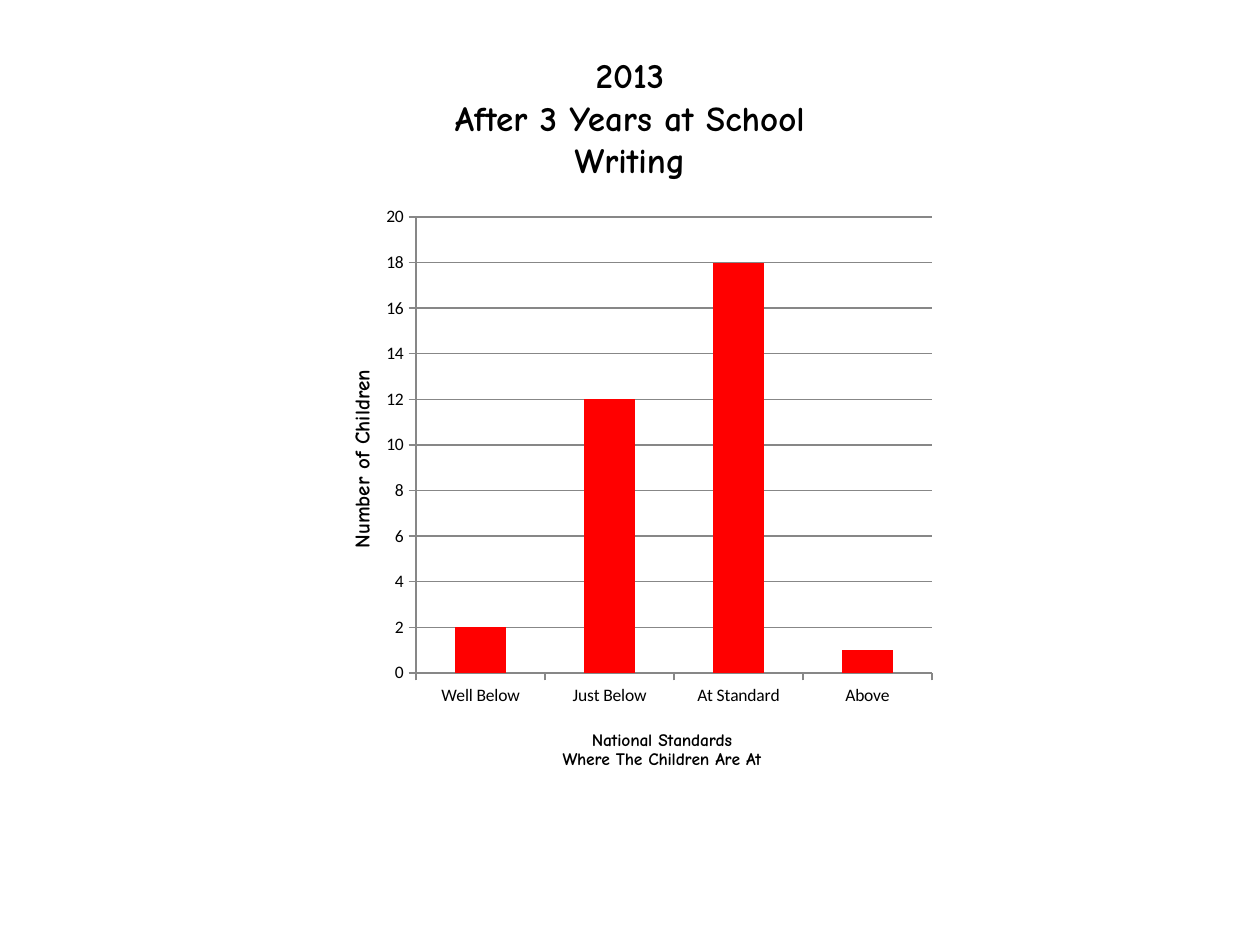
from lxml import etree
from pptx import Presentation
from pptx.chart.data import CategoryChartData
from pptx.dml.color import RGBColor
from pptx.enum.chart import XL_CHART_TYPE, XL_TICK_MARK
from pptx.enum.text import MSO_ANCHOR, PP_ALIGN
from pptx.oxml.ns import qn
from pptx.util import Pt

PX = 914400 / 126
COLUMNS = XL_CHART_TYPE.COLUMN_CLUSTERED
TICK_OUTSIDE = XL_TICK_MARK.OUTSIDE
MIDDLE = MSO_ANCHOR.MIDDLE
CENTER = PP_ALIGN.CENTER
COLORS = {"text": "000000", "bar": "FF0000", "line": "878787"}
HEADING_FONT = "Comic Neue"
LABEL_FONT = "Calibri"


def px(value):
    return round(value * PX)


def color(name):
    return RGBColor.from_string(COLORS[name])


class ChartSlide:
    """Holds the style and the current slide, and adds its elements."""

    def __init__(self, presentation):
        self.slide = presentation.slides.add_slide(presentation.slide_layouts[6])

    def style_font(self, font, name, size, bold):
        font.name = name
        font.size = Pt(size)
        font.bold = bold
        font.color.rgb = color("text")

    def set_heading(self, text_frame, text, size):
        text_frame.text = text
        for paragraph in text_frame.paragraphs:
            paragraph.alignment = CENTER
            for run in paragraph.runs:
                self.style_font(run.font, HEADING_FONT, size, True)

    def title(self, box, text, size):
        shape = self.slide.shapes.add_textbox(*map(px, box))
        shape.text_frame.word_wrap = True
        shape.text_frame.vertical_anchor = MIDDLE
        self.set_heading(shape.text_frame, text, size)

    def place(self, parent, chart_box, **position):
        layout = parent.find(qn("c:layout"))
        if layout is None:
            layout = etree.Element(qn("c:layout"))
            parent.insert(0, layout)
        manual = etree.SubElement(layout, qn("c:manualLayout"))
        left, top, width, height = chart_box
        values = {}
        if "w" in position:
            values["layoutTarget"] = "inner"
        values.update(xMode="edge", yMode="edge")
        values["x"] = (position["x"] - left) / width
        values["y"] = (position["y"] - top) / height
        if "w" in position:
            values["w"] = position["w"] / width
            values["h"] = position["h"] / height
        for tag, value in values.items():
            etree.SubElement(manual, qn(f"c:{tag}")).set("val", str(value))

    def axis(self, axis, text, size, chart_box, x, y):
        axis.major_tick_mark = TICK_OUTSIDE
        axis.format.line.color.rgb = color("line")
        axis.format.line.width = Pt(0.75)
        axis.has_title = True
        self.set_heading(axis.axis_title.text_frame, text, size)
        title_element = axis.axis_title.text_frame._txBody.getparent().getparent()
        self.place(title_element, chart_box, x=x, y=y)

    def column_chart(self, box, categories, values):
        data = CategoryChartData()
        data.categories = categories
        data.add_series("Series 1", values)
        chart = self.slide.shapes.add_chart(COLUMNS, *map(px, box), data).chart
        chart.has_title = False
        chart.has_legend = False
        self.style_font(chart.font, LABEL_FONT, 10, False)
        plot = chart.plots[0]
        plot.gap_width = 150
        plot.vary_by_categories = False
        fill = plot.series[0].format.fill
        fill.solid()
        fill.fore_color.rgb = color("bar")
        plot_area = chart._chartSpace.find(".//" + qn("c:plotArea"))
        self.place(plot_area, box, x=416, y=217, w=516, h=456)
        self.axis(chart.category_axis, "National Standards\nWhere The Children Are At",
                  10, box, 559, 724)
        value_axis = chart.value_axis
        self.axis(value_axis, "Number of Children", 12, box, 345, 366)
        value_axis.minimum_scale = 0
        value_axis.maximum_scale = 20
        value_axis.major_unit = 2
        value_axis.has_major_gridlines = True
        grid_line = value_axis.major_gridlines.format.line
        grid_line.color.rgb = color("line")
        grid_line.width = Pt(0.75)


def main():
    presentation = Presentation()
    presentation.slide_width = px(1260)
    presentation.slide_height = px(945)
    chart_slide = ChartSlide(presentation)
    chart_slide.title((63, 38, 1134, 158), "2013\vAfter 3 Years at School\vWriting", 20)
    chart_slide.column_chart((315, 195, 630, 615),
                             ("Well Below", "Just Below", "At Standard", "Above"),
                             (2, 12, 18, 1))
    presentation.save("out.pptx")


if __name__ == "__main__":
    main()
